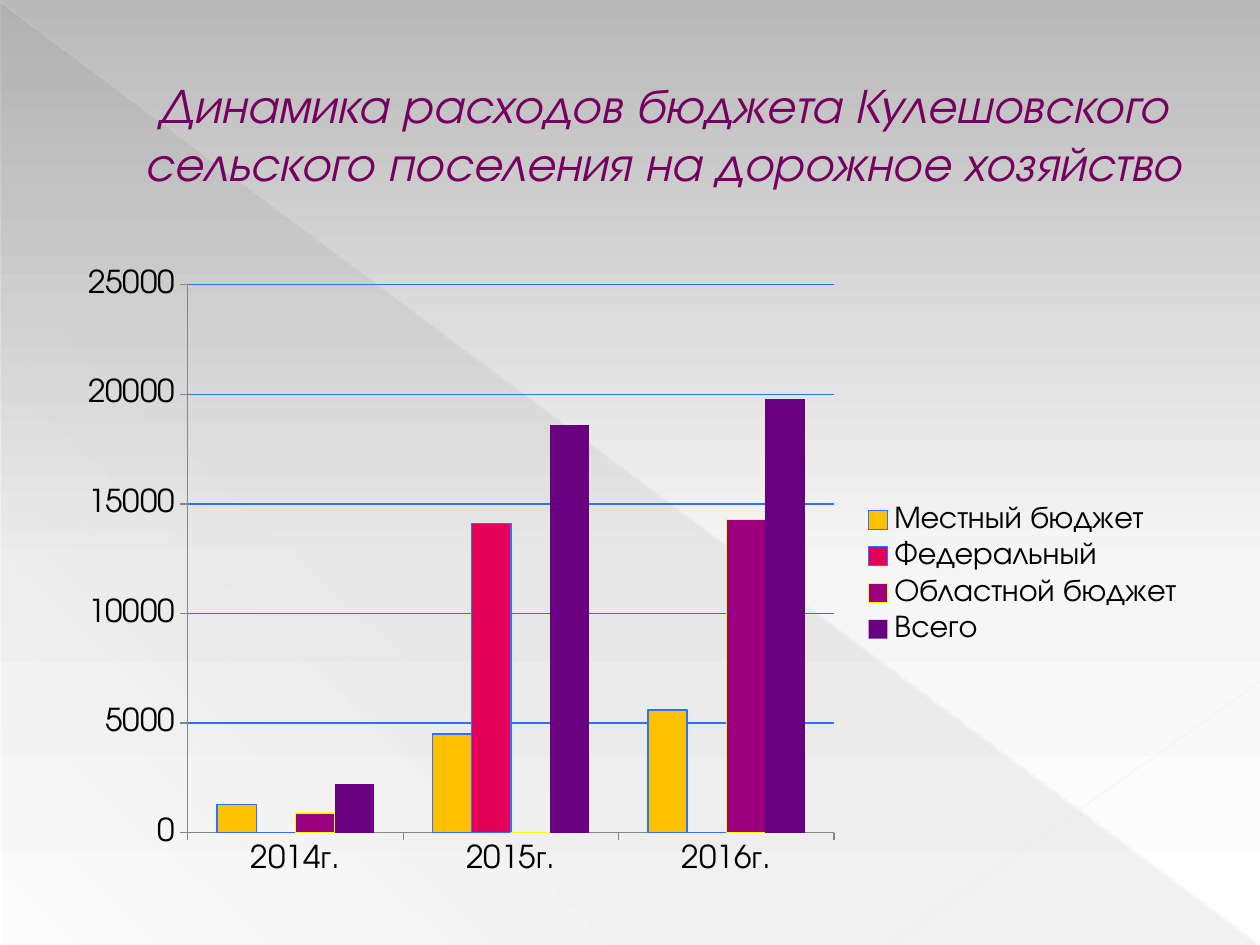
from typing import NamedTuple

from lxml import etree
from pptx import Presentation
from pptx import util as u
from pptx.chart.data import CategoryChartData
from pptx.dml.color import RGBColor
from pptx.enum import chart as charts, shapes, text
from pptx.oxml import parse_xml
from pptx.oxml.ns import nsdecls, qn

FONT = "TeX Gyre Adventor"
AXIS_GREY = "868686"
GRID_BLUE = "2C71FF"


class Stop(NamedTuple):
    position: int
    color: str
    opacity: int = 100


class Ray(NamedTuple):
    start: tuple[float, float]
    end: tuple[float, float]
    color: str
    width: float
    opacity: int


class Budget(NamedTuple):
    name: str
    values: tuple[int, ...]
    fill: str
    outline: str | None


RAYS = [
    Ray((0, 0.01), (9.99, 7.49), "E8E8E8", 0.39, 35),
    Ray((10, 5.41), (7.07, 7.49), "EAEAEA", 0.47, 45),
]
YEARS = ["2014г.", "2015г.", "2016г."]
BUDGETS = [
    Budget("Местный бюджет", (1300, 4500, 5600), "FFC000", GRID_BLUE),
    Budget("Федеральный", (0, 14100, 0), "E40059", GRID_BLUE),
    Budget("Областной бюджет", (900, 0, 14300), "9C007F", "FFFF00"),
    Budget("Всего", (2200, 18600, 19800), "68007F", None),
]


def rgb(color: str) -> RGBColor:
    return RGBColor.from_string(color)


def set_line(line, color: str, width: float) -> None:
    line.color.rgb = rgb(color)
    line.width = u.Pt(width)


def set_gradient(fill, parent, stops: list[Stop], angle: int) -> None:
    """Give the fill below parent its own stops and clockwise angle."""
    fill.gradient()
    old = parent.find(".//" + qn("a:gradFill"))
    marks = "".join(
        f'<a:gs pos="{s.position * 1000}"><a:srgbClr val="{s.color}">'
        f'<a:alpha val="{s.opacity * 1000}"/></a:srgbClr></a:gs>' for s in stops)
    old.getparent().replace(old, parse_xml(
        f'<a:gradFill {nsdecls("a")} rotWithShape="1"><a:gsLst>{marks}</a:gsLst>'
        f'<a:lin ang="{angle * 60000}" scaled="0"/></a:gradFill>'))


def draw_ray(page, ray: Ray) -> None:
    line = page.shapes.add_connector(
        shapes.MSO_CONNECTOR.STRAIGHT, *map(u.Inches, ray.start + ray.end))
    set_line(line.line, ray.color, ray.width)
    properties = line._element.spPr
    color = properties.find(".//" + qn("a:srgbClr"))
    etree.SubElement(color, qn("a:alpha"), val=str(ray.opacity * 1000))
    etree.SubElement(properties, qn("a:effectLst"))


def write_text(frame, words: str, *, size: float, color: str, italic: bool = False,
               outline: str, outline_width: float, indent: float = 0) -> None:
    frame.word_wrap = True
    frame.auto_size = text.MSO_AUTO_SIZE.NONE
    frame.vertical_anchor = text.MSO_ANCHOR.MIDDLE
    para = frame.paragraphs[0]
    para.alignment = text.PP_ALIGN.CENTER
    para._p.get_or_add_pPr().set("marL", str(u.Inches(indent)))
    span = para.add_run()
    span.text = words
    font = span.font
    font.name, font.size, font.italic = FONT, u.Pt(size), italic
    font.color.rgb = rgb(color)
    span._r.get_or_add_rPr().insert(0, parse_xml(
        f'<a:ln {nsdecls("a")} w="{u.Pt(outline_width)}"><a:solidFill>'
        f'<a:srgbClr val="{outline}"/></a:solidFill></a:ln>'))


def set_plot_area(chart, **fractions: float) -> None:
    """Fix the inner plot area as fractions of the chart."""
    area = chart._chartSpace.chart.plotArea
    for old in area.findall(qn("c:layout")):
        area.remove(old)
    sizes = "".join(f'<c:{key} val="{value}"/>' for key, value in fractions.items())
    area.insert(0, parse_xml(
        f'<c:layout {nsdecls("c")}><c:manualLayout><c:layoutTarget val="inner"/>'
        f'<c:xMode val="edge"/><c:yMode val="edge"/>{sizes}'
        '</c:manualLayout></c:layout>'))


def draw_chart(page) -> None:
    data = CategoryChartData()
    data.categories = YEARS
    for budget in BUDGETS:
        data.add_series(budget.name, budget.values)
    chart = page.shapes.add_chart(
        charts.XL_CHART_TYPE.COLUMN_CLUSTERED,
        *map(u.Inches, (0.5, 2.06, 9, 5)), data).chart
    chart.has_title = False
    chart.font.name, chart.font.size = FONT, u.Pt(18)
    chart.font.color.rgb = rgb("000000")
    set_plot_area(chart, x=0.11, y=0.04, w=0.57, h=0.87)

    # Columns
    plot = chart.plots[0]
    plot.gap_width, plot.overlap = 150, 0
    plot.vary_by_categories = False
    for series, budget in zip(plot.series, BUDGETS):
        series.invert_if_negative = False
        series.format.fill.solid()
        series.format.fill.fore_color.rgb = rgb(budget.fill)
        if budget.outline:
            set_line(series.format.line, budget.outline, 0.75)

    # Axes and legend
    for axis in (chart.category_axis, chart.value_axis):
        axis.major_tick_mark = charts.XL_TICK_MARK.OUTSIDE
        axis.minor_tick_mark = charts.XL_TICK_MARK.NONE
        set_line(axis.format.line, AXIS_GREY, 0.75)
    scale = chart.value_axis
    scale.minimum_scale, scale.maximum_scale, scale.major_unit = 0, 25000, 5000
    scale.has_major_gridlines = True
    set_line(scale.major_gridlines.format.line, GRID_BLUE, 0.75)
    chart.has_legend = True
    chart.legend.position = charts.XL_LEGEND_POSITION.RIGHT
    chart.legend.include_in_layout = False


def main() -> None:
    deck = Presentation()
    deck.slide_width, deck.slide_height = u.Inches(10), u.Inches(7.5)
    page = deck.slides.add_slide(deck.slide_layouts[5])

    # Backdrop: gradient, shaded corner and thin rays
    set_gradient(page.background.fill, page._element,
                 [Stop(0, "B9B9B9"), Stop(60, "F6F6F6"), Stop(100, "FFFFFF")], 90)
    corner = page.shapes.add_shape(
        shapes.MSO_SHAPE.RIGHT_TRIANGLE, *map(u.Inches, (0.01, 0.02, 9.98, 7.48)))
    corner.shadow.inherit = False
    corner.line.fill.background()
    set_gradient(corner.fill, corner._element,
                 [Stop(0, "666666", 10), Stop(70, "666666", 8), Stop(100, "666666", 1)], 133)
    for ray in RAYS:
        draw_ray(page, ray)

    # Title, placed in front of the backdrop
    title = page.shapes.title
    title.left, title.top, title.width, title.height = map(u.Inches, (0.5, 0.29, 9, 1.53))
    write_text(title.text_frame,
               "Динамика расходов бюджета Кулешовского сельского поселения "
               "на дорожное хозяйство",
               size=28, color="75005F", italic=True,
               outline="B12761", outline_width=0.5, indent=0.53)
    page.shapes._spTree.append(title._element)

    draw_chart(page)
    deck.save("out.pptx")


if __name__ == "__main__":
    main()
